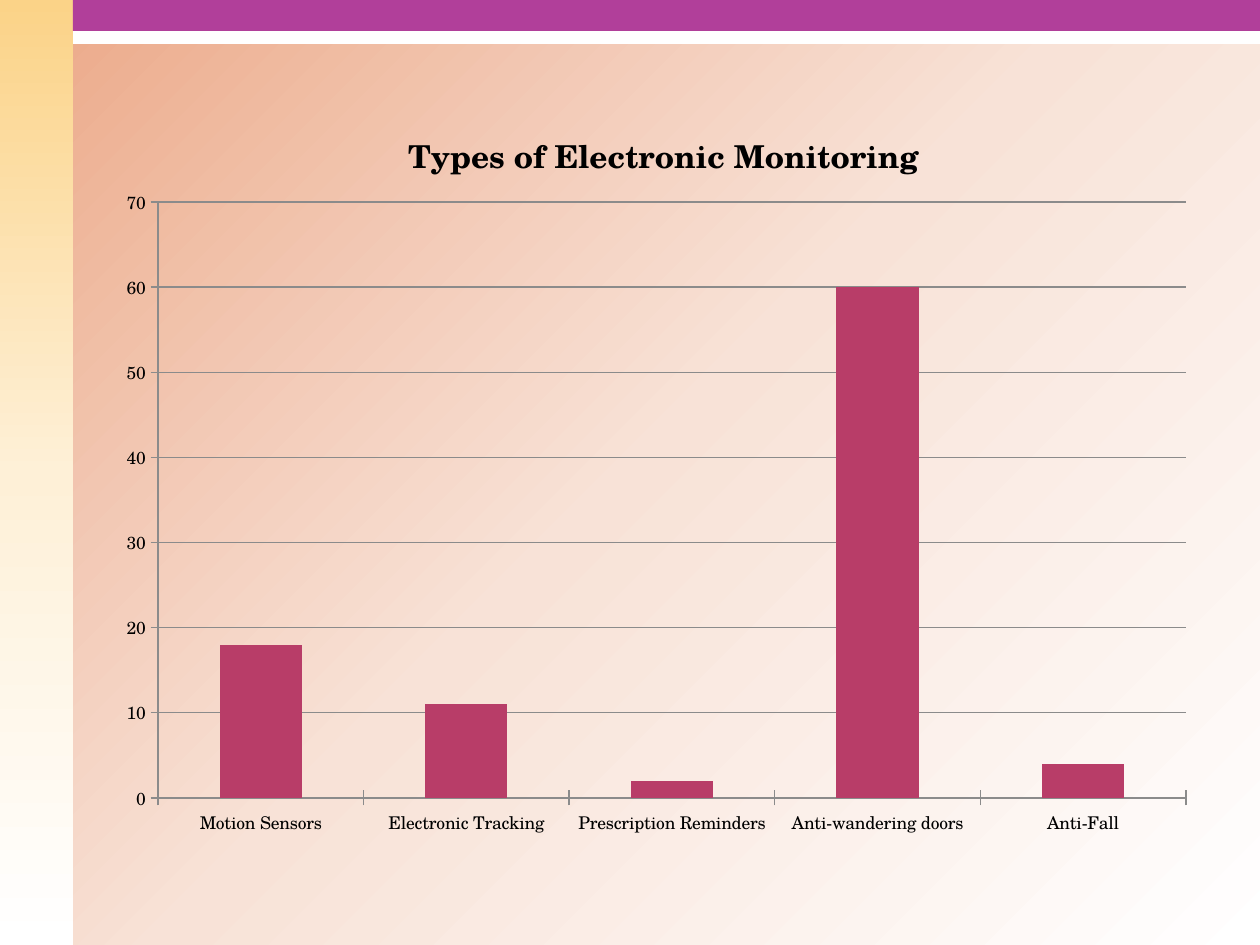
import copy

import pptx
import pptx.chart.data
import pptx.dml.color
import pptx.enum.chart
import pptx.enum.shapes
import pptx.util
from lxml import etree
from pptx.oxml.ns import qn

RGB = pptx.dml.color.RGBColor
WHITE = RGB(0xFF, 0xFF, 0xFF)
BLACK = RGB(0x00, 0x00, 0x00)
PURPLE = RGB(0xB1, 0x3F, 0x9A)
RASPBERRY = RGB(0xB8, 0x3D, 0x68)
GREY = RGB(0x8B, 0x8B, 0x8B)
PEACH = (RGB(0xEB, 0xA7, 0x86), RGB(0xF8, 0xE2, 0xD7), WHITE)
GOLD = (RGB(0xFB, 0xD3, 0x88), RGB(0xFE, 0xF0, 0xD7), WHITE)

FONT = "TeX Gyre Schola"
WIDTH, HEIGHT = 1260, 945
SIDEBAR_WIDTH, RIBBON_HEIGHT, STRIP_HEIGHT = 73, 31, 44

MONITORING = {
    "Motion Sensors": 18,
    "Electronic Tracking": 11,
    "Prescription Reminders": 2,
    "Anti-wandering doors": 60,
    "Anti-Fall": 4,
}


def px(length):
    return pptx.util.Emu(round(length * 914400 / 126))


def set_values(target, values):
    for name, value in values.items():
        setattr(target, name, value)


def set_font(font, size, bold=False):
    set_values(font, {"name": FONT, "size": pptx.util.Pt(size), "bold": bold})
    font.color.rgb = BLACK


def fill_gradient(fill, colors, clockwise):
    """Spread three colours evenly along the given clockwise angle."""
    fill.gradient()
    fill.gradient_angle = 360 - clockwise
    first = fill.gradient_stops[0]._gs
    first.addnext(copy.deepcopy(first))
    for stop, color, position in zip(fill.gradient_stops, colors, (0, 0.5, 1)):
        stop.position = position
        stop.color.rgb = color


def add_band(slide, box):
    band = slide.shapes.add_shape(
        pptx.enum.shapes.MSO_SHAPE.RECTANGLE, *map(px, box))
    band.shadow.inherit = False
    band.line.fill.background()
    return band.fill


def add_frame(slide, box):
    """Draw the backdrop, the gold sidebar and the ribbon over a white strip."""
    left, top, width, height = box
    fill_gradient(slide.background.fill, PEACH, 45)
    strip = add_band(slide, (left, top, width, STRIP_HEIGHT))
    strip.solid()
    strip.fore_color.rgb = WHITE
    sidebar = add_band(slide, (left, top, SIDEBAR_WIDTH, height))
    fill_gradient(sidebar, GOLD, 90)
    ribbon = add_band(slide, (left + SIDEBAR_WIDTH, top,
                              width - SIDEBAR_WIDTH, RIBBON_HEIGHT))
    ribbon.solid()
    ribbon.fore_color.rgb = PURPLE


def set_layout(parent, index, values):
    """Give a chart part a manual layout in fractions of the chart."""
    for old in parent.findall(qn("c:layout")):
        parent.remove(old)
    layout = etree.Element(qn("c:layout"))
    manual = etree.SubElement(layout, qn("c:manualLayout"))
    for name, value in values.items():
        etree.SubElement(manual, qn(f"c:{name}")).set("val", str(value))
    parent.insert(index, layout)


def add_monitoring_chart(slide, box):
    data = pptx.chart.data.CategoryChartData()
    data.categories = list(MONITORING)
    data.add_series("Series 1", list(MONITORING.values()))
    chart = slide.shapes.add_chart(
        pptx.enum.chart.XL_CHART_TYPE.COLUMN_CLUSTERED,
        *map(px, box), data).chart
    set_font(chart.font, 10)
    chart.has_legend = False

    title = chart.chart_title
    title.text_frame.text = "Types of Electronic Monitoring"
    set_font(title.text_frame.paragraphs[0].runs[0].font, 18, bold=True)
    set_layout(title._element, 1,
               {"xMode": "edge", "yMode": "edge", "x": 0.27, "y": 0.05})

    _, _, width, height = box
    set_layout(chart._chartSpace.chart.plotArea, 0, {
        "layoutTarget": "inner", "xMode": "edge", "yMode": "edge",
        "x": 53 / width, "y": 118 / height,
        "w": 1028 / width, "h": 596 / height})

    plot = chart.plots[0]
    set_values(plot, {"gap_width": 150, "vary_by_categories": False})
    bars = plot.series[0].format.fill
    bars.solid()
    bars.fore_color.rgb = RASPBERRY

    set_values(chart.value_axis, {
        "minimum_scale": 0, "maximum_scale": 70, "major_unit": 10,
        "has_major_gridlines": True})
    for axis in (chart.category_axis, chart.value_axis):
        axis.major_tick_mark = pptx.enum.chart.XL_TICK_MARK.CROSS
    for ruled in (chart.category_axis, chart.value_axis,
                  chart.value_axis.major_gridlines):
        ruled.format.line.color.rgb = GREY
        ruled.format.line.width = pptx.util.Pt(0.75)


def main():
    deck = pptx.Presentation()
    set_values(deck, {"slide_width": px(WIDTH), "slide_height": px(HEIGHT)})
    slide = deck.slides.add_slide(deck.slide_layouts[6])
    add_frame(slide, (0, 0, WIDTH, HEIGHT))
    add_monitoring_chart(slide, (105, 84, 1102, 766))
    deck.save("out.pptx")


if __name__ == "__main__":
    main()
